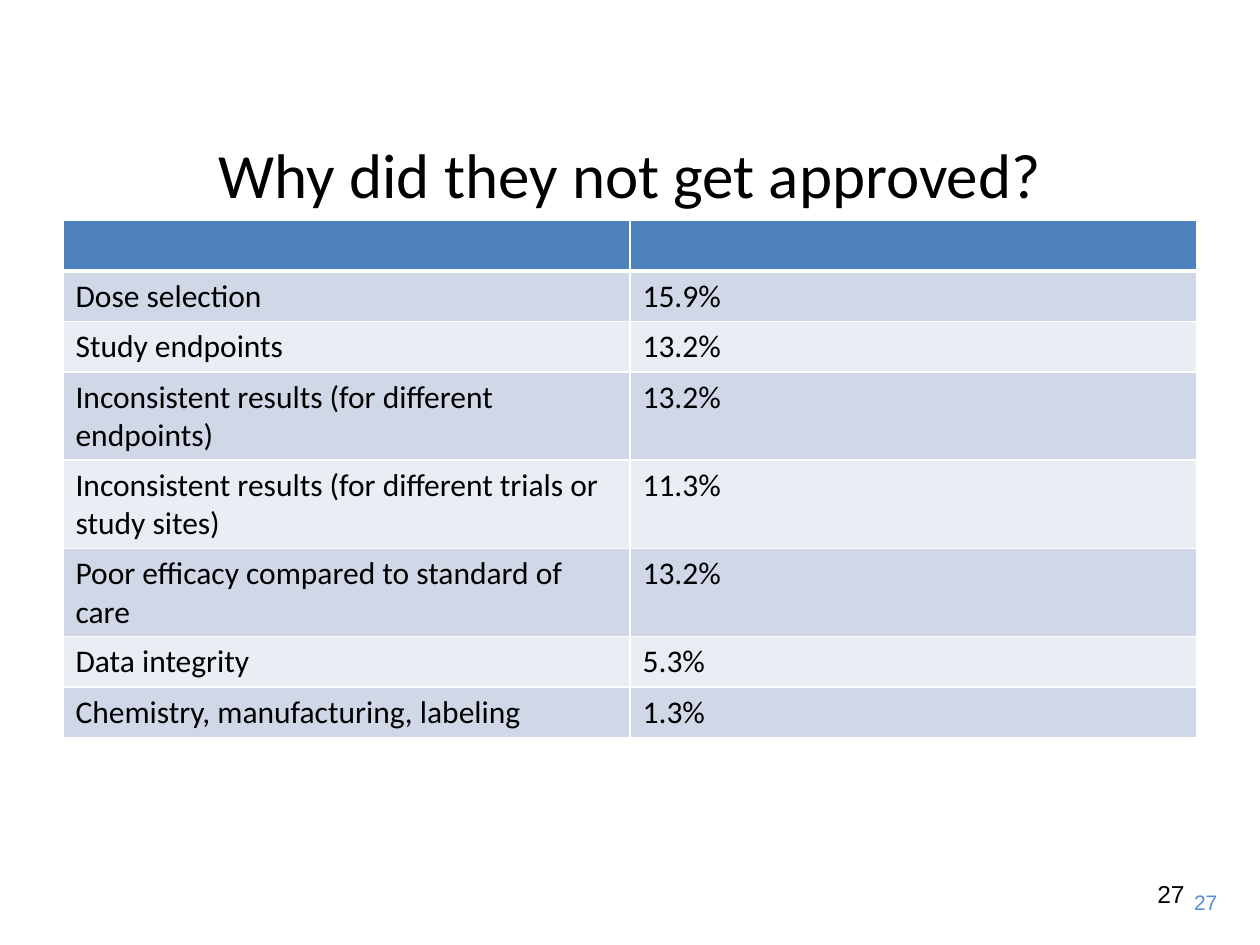
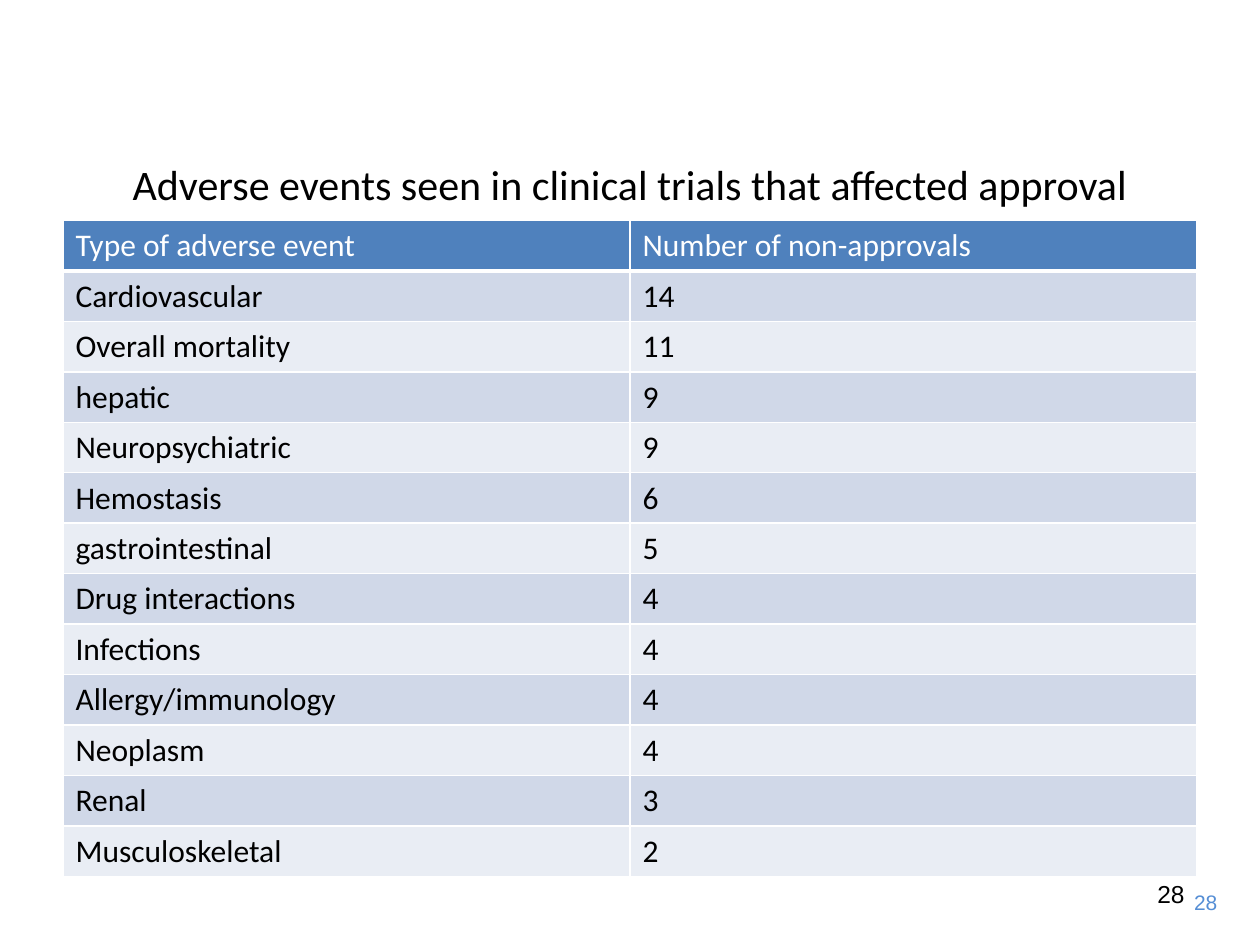
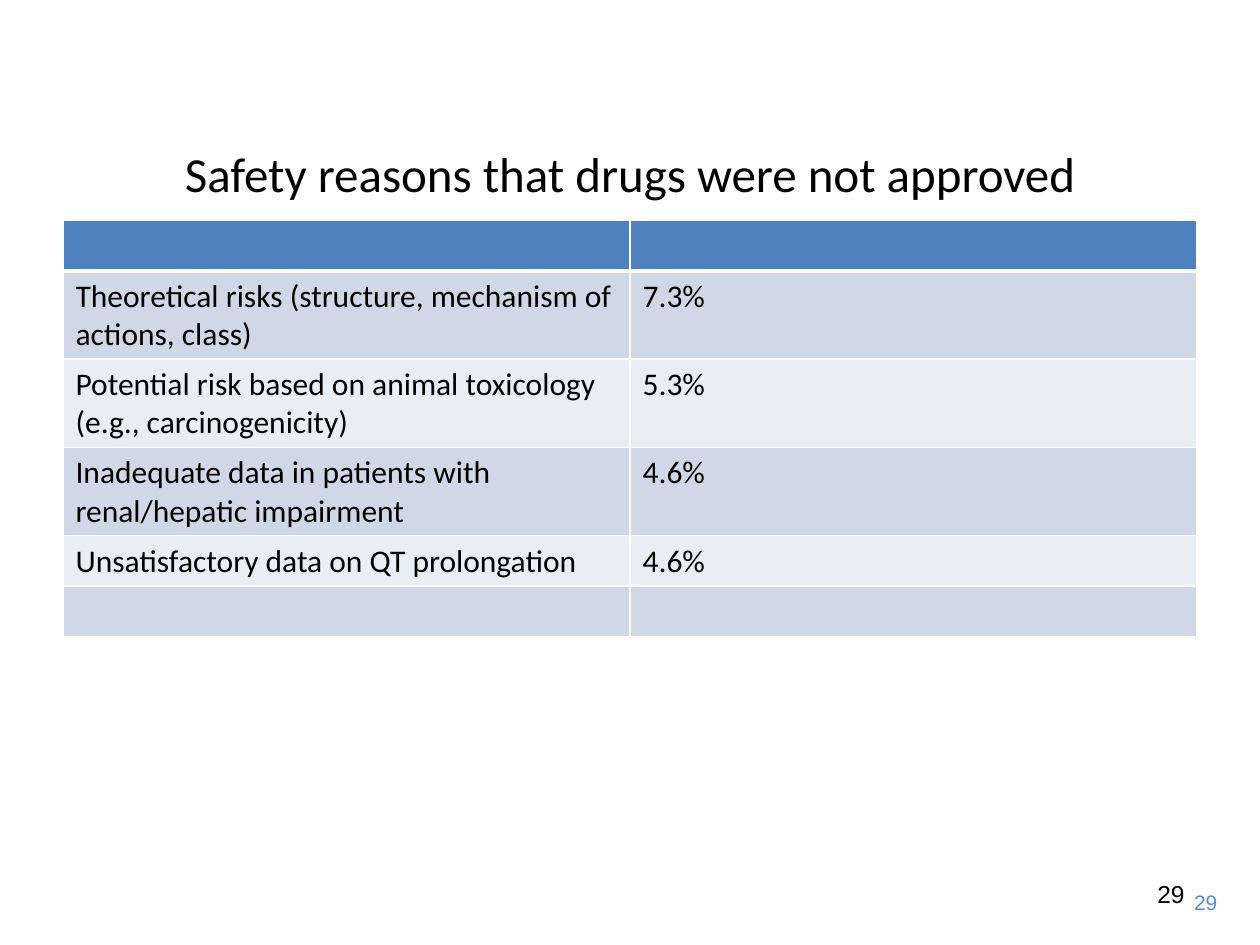
"""Build three table slides on why drugs were not approved."""
from lxml.etree import SubElement
from pptx import Presentation
from pptx.dml.color import RGBColor
from pptx.enum.text import MSO_ANCHOR, PP_ALIGN
from pptx.oxml.ns import qn
from pptx.util import Inches, Pt

BLACK = RGBColor(0x00, 0x00, 0x00)
WHITE = RGBColor(0xFF, 0xFF, 0xFF)
HEADER_BLUE = RGBColor(0x4F, 0x81, 0xBD)
NUMBER_BLUE = RGBColor(0x55, 0x8E, 0xD5)
BAND_DARK = RGBColor(0xD0, 0xD8, 0xE8)
BAND_LIGHT = RGBColor(0xE9, 0xED, 0xF4)

FIRST_NUMBER = 27
ROW_HEIGHT = 0.4
WRAPPED_ROW_HEIGHT = 0.7
LONGEST_SINGLE_LINE = 40

SLIDES = [
    ("Why did they not get approved?", 36, 0.75, [
        ("", ""),
        ("Dose selection", "15.9%"),
        ("Study endpoints", "13.2%"),
        ("Inconsistent results (for different endpoints)", "13.2%"),
        ("Inconsistent results (for different trials or study sites)", "11.3%"),
        ("Poor efficacy compared to standard of care", "13.2%"),
        ("Data integrity", "5.3%"),
        ("Chemistry, manufacturing, labeling", "1.3%"),
    ]),
    ("Adverse events seen in clinical trials that affected approval", 24, 0.83, [
        ("Type of adverse event", "Number of non-approvals"),
        ("Cardiovascular", "14"),
        ("Overall mortality", "11"),
        ("hepatic", "9"),
        ("Neuropsychiatric", "9"),
        ("Hemostasis", "6"),
        ("gastrointestinal", "5"),
        ("Drug interactions", "4"),
        ("Infections", "4"),
        ("Allergy/immunology", "4"),
        ("Neoplasm", "4"),
        ("Renal", "3"),
        ("Musculoskeletal", "2"),
    ]),
    ("Safety reasons that drugs were not approved", 28, 0.75, [
        ("", ""),
        ("Theoretical risks (structure, mechanism of actions, class)", "7.3%"),
        ("Potential risk based on animal toxicology (e.g., carcinogenicity)", "5.3%"),
        ("Inadequate data in patients with renal/hepatic impairment", "4.6%"),
        ("Unsatisfactory data on QT prolongation", "4.6%"),
        ("", ""),
    ]),
]


def add_text(page, text, place, size, font, color, align, anchor=MSO_ANCHOR.MIDDLE):
    box = page.shapes.add_textbox(*[Inches(length) for length in place])
    box.text_frame.word_wrap = True
    box.text_frame.vertical_anchor = anchor
    para = box.text_frame.paragraphs[0]
    para.alignment = align
    span = para.add_run()
    span.text = text
    span.font.size = Pt(size)
    span.font.name = font
    span.font.color.rgb = color


def style_cell(cell, text, fill, color, bottom_width):
    properties = cell._tc.get_or_add_tcPr()
    for side, width in (("L", 1), ("R", 1), ("T", 1), ("B", bottom_width)):
        border = SubElement(properties, qn(f"a:ln{side}"), w=str(Pt(width)))
        paint = SubElement(border, qn("a:solidFill"))
        SubElement(paint, qn("a:srgbClr"), val=str(WHITE))
    cell.fill.solid()
    cell.fill.fore_color.rgb = fill
    if text:
        span = cell.text_frame.paragraphs[0].add_run()
        span.text = text
        span.font.size = Pt(18)
        span.font.name = "Calibri"
        span.font.bold = False
        span.font.color.rgb = color


deck = Presentation()
deck.slide_width = Inches(10)
deck.slide_height = Inches(7.5)

for number, (title, title_size, title_top, rows) in enumerate(SLIDES, FIRST_NUMBER):
    page = deck.slides.add_slide(deck.slide_layouts[6])
    add_text(page, str(number), (9.35, 7.01, 0.41, 0.3), 12, "Arial", NUMBER_BLUE,
             PP_ALIGN.RIGHT, MSO_ANCHOR.TOP)
    add_text(page, title, (0.5, title_top, 9, 1.25), title_size, "Calibri", BLACK,
             PP_ALIGN.CENTER)

    heights = [WRAPPED_ROW_HEIGHT if len(label) > LONGEST_SINGLE_LINE else ROW_HEIGHT
               for label, value in rows]
    table = page.shapes.add_table(len(rows), 2, Inches(0.5), Inches(1.75),
                                  Inches(9), Inches(sum(heights))).table
    for row_index, row in enumerate(rows):
        table.rows[row_index].height = Inches(heights[row_index])
        if row_index == 0:
            fill, color, bottom_width = HEADER_BLUE, WHITE, 3
        else:
            fill = BAND_DARK if row_index % 2 else BAND_LIGHT
            color, bottom_width = BLACK, 1
        for column_index, text in enumerate(row):
            style_cell(table.cell(row_index, column_index), text, fill, color, bottom_width)

    add_text(page, str(number), (7.17, 6.83, 2.33, 0.52), 14, "Arial", BLACK,
             PP_ALIGN.RIGHT)

deck.save("out.pptx")
